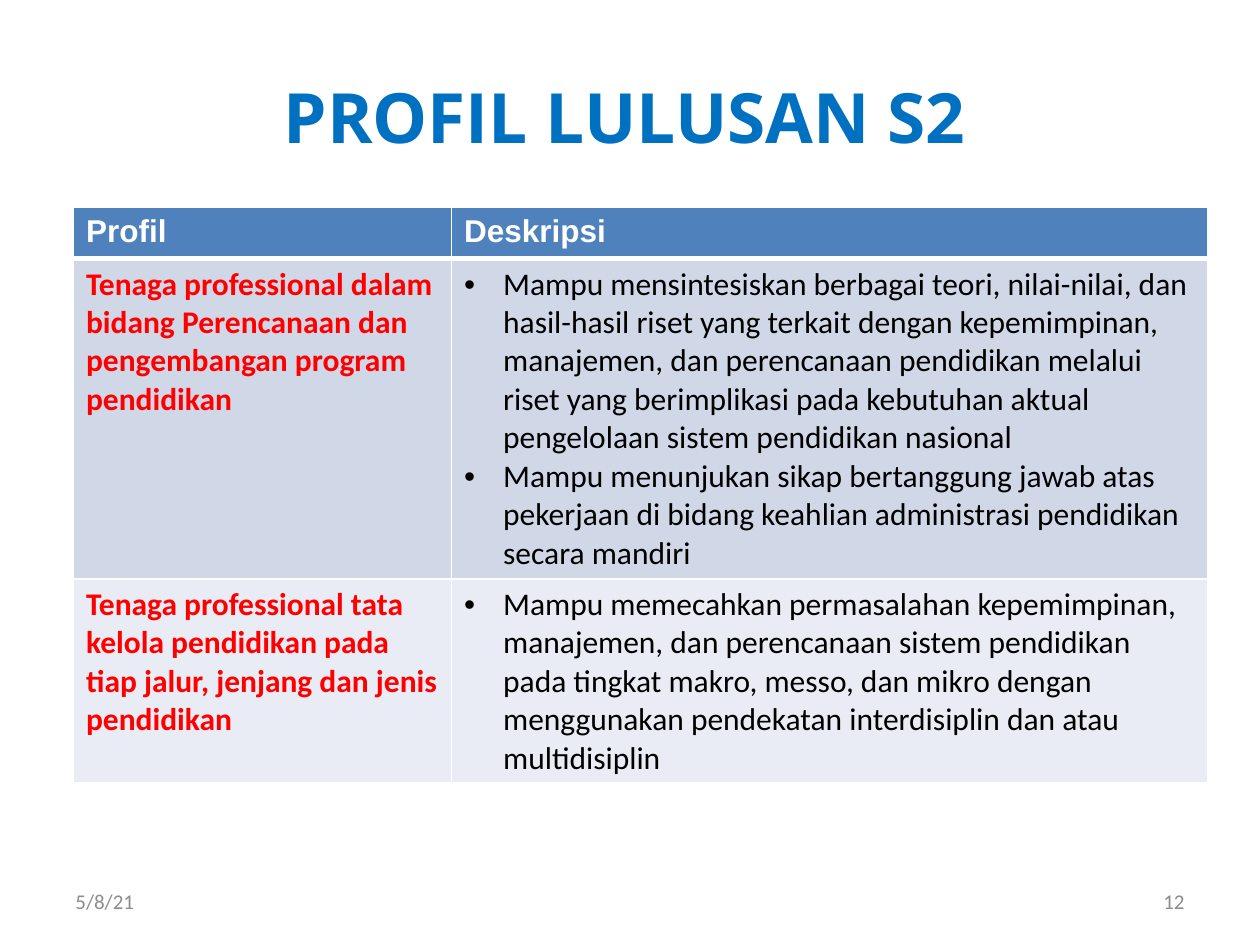
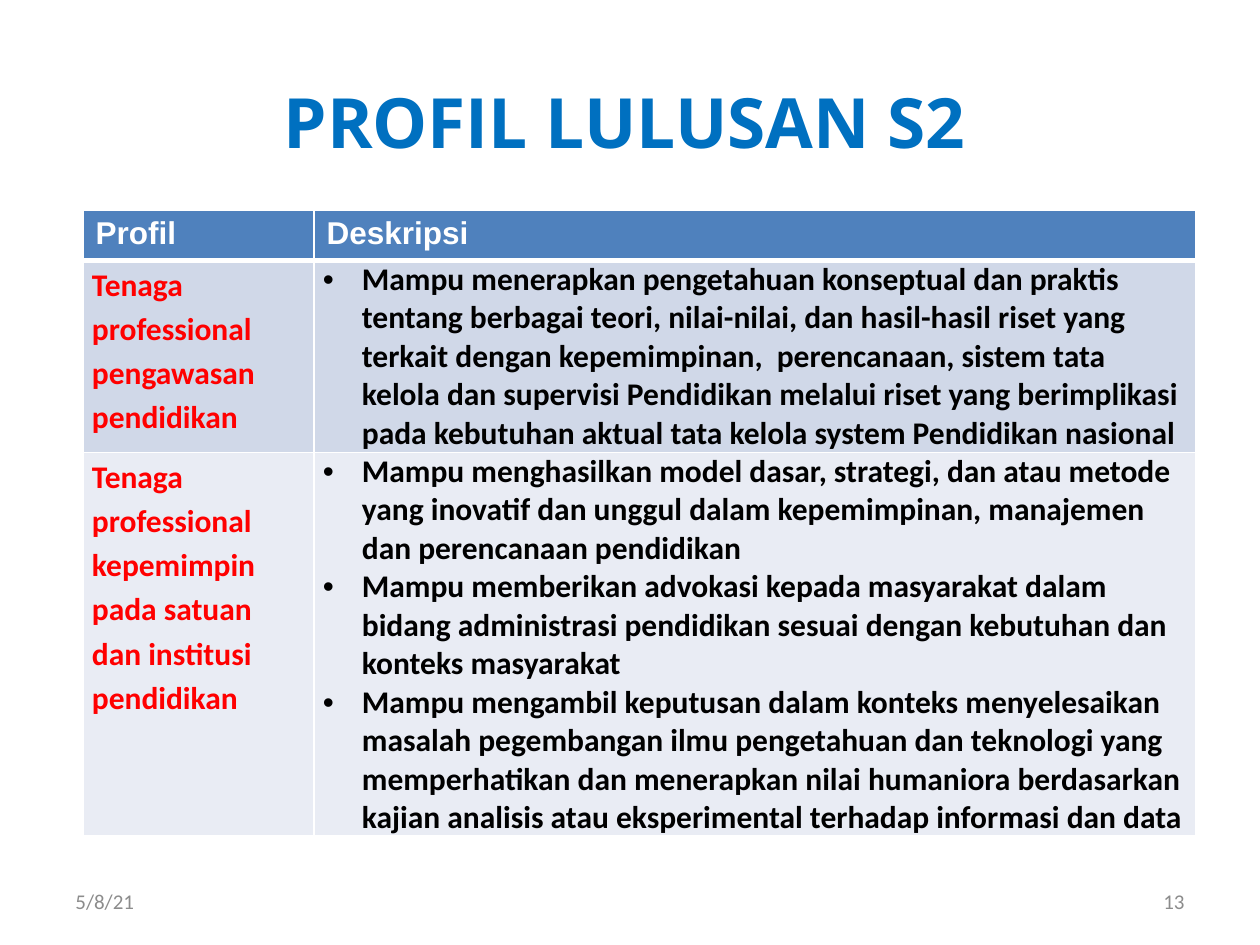
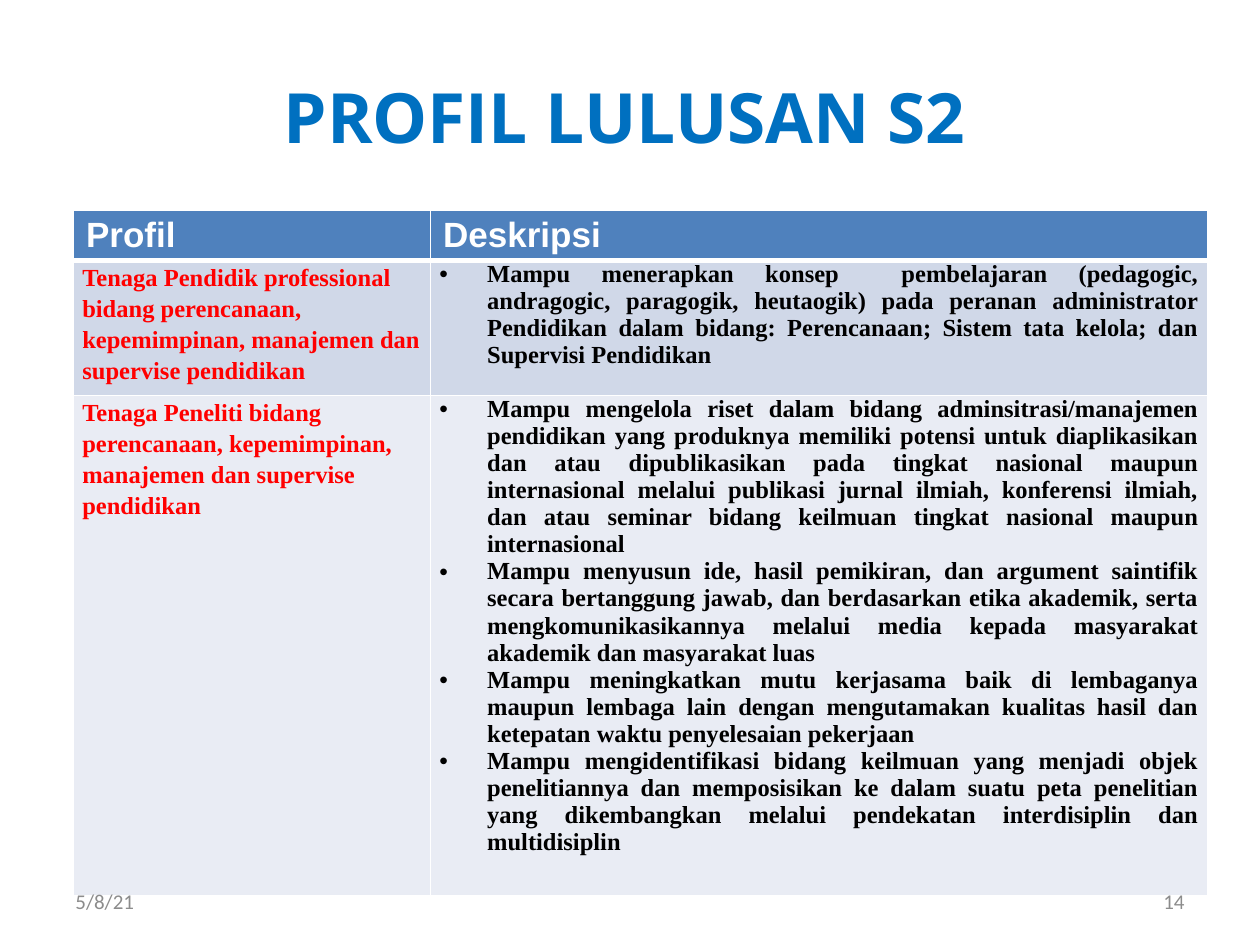
from dataclasses import dataclass
from lxml import etree
from pptx import Presentation
from pptx import util as u
from pptx.dml.color import RGBColor
from pptx.enum import text
from pptx.oxml import ns

WHITE, BLACK, RED, GREY = "FFFFFF", "000000", "FF0000", "8C8C8C"
TITLE, HEAD = "0070C0", "4F81BD"
BANDS = ["D0D8E8", "E9ECF4"]
LEFT, MID, RIGHT, JUST = (text.PP_ALIGN.LEFT, text.PP_ALIGN.CENTER,
                          text.PP_ALIGN.RIGHT, text.PP_ALIGN.JUSTIFY)


def paint(code):
    return RGBColor.from_string(code)


def node(parent, tag, **attrs):
    return etree.SubElement(parent, ns.qn(tag), attrs)


@dataclass
class Look:
    font: str = "Calibri"
    size: float = 18
    bold: bool = True
    head: float = 18
    align: int = LEFT
    indent: float = 0.31
    tight: bool = True


class Deck:
    cols, rows = 120, 90

    def __init__(self):
        self.prs = Presentation()
        self.prs.slide_width = u.Inches(10)
        self.prs.slide_height = u.Inches(7.5)
        self.blank = self.prs.slide_layouts[6]

    def across(self, n):
        return round(self.prs.slide_width * n / self.cols)

    def down(self, n):
        return round(self.prs.slide_height * n / self.rows)

    def page(self):
        self.slide = self.prs.slides.add_slide(self.blank)

    def run(self, para, words, font, size, color, bold=False):
        run = para.add_run()
        run.text = words
        run.font.name = font
        run.font.size = u.Pt(size)
        run.font.bold = bold
        run.font.color.rgb = paint(color)

    def box(self, words, x, y, w, h, font, size, color, align, bold=False):
        shape = self.slide.shapes.add_textbox(
            self.across(x), self.down(y), self.across(w), self.down(h))
        frame = shape.text_frame
        frame.word_wrap = True
        frame.vertical_anchor = text.MSO_ANCHOR.MIDDLE
        para = frame.paragraphs[0]
        para.alignment = align
        self.run(para, words, font, size, color, bold)
        return frame

    def title(self, words, y):
        frame = self.box(words, 6, y, 107, 4.4, "Open Sans", 39.6, TITLE, MID, True)
        frame.vertical_anchor = text.MSO_ANCHOR.BOTTOM
        frame.margin_bottom = u.Inches(0.18)

    def foot(self, date, num):
        for words, x, align in [(date, 6, LEFT), (str(num), 86, RIGHT)]:
            self.box(words, x, 83.4, 28, 4.8, "Calibri", 12, GREY, align)

    def cell(self, cell, fill, base=1):
        props = cell._tc.get_or_add_tcPr()
        for side, width in [("L", 1), ("R", 1), ("T", 1), ("B", base)]:
            line = node(props, f"a:ln{side}", w=str(u.Pt(width)))
            node(node(line, "a:solidFill"), "a:srgbClr", val=WHITE)
        cell.fill.solid()
        cell.fill.fore_color.rgb = paint(fill)
        return cell.text_frame

    def tight(self, cell):
        cell.margin_left = cell.margin_right = u.Inches(0.07)
        cell.margin_top = cell.margin_bottom = 0

    def label(self, frame, words, look):
        para = frame.paragraphs[0]
        if look.tight:
            para.line_spacing = 1.15
        self.run(para, words, look.font, look.size, RED, True)

    def points(self, frame, items, look):
        for i, item in enumerate(items):
            para = frame.add_paragraph() if i else frame.paragraphs[0]
            para.alignment = look.align
            props = para._p.get_or_add_pPr()
            step = u.Inches(look.indent)
            props.set("marL", str(step))
            props.set("indent", str(-step))
            node(props, "a:buFont", typeface="Arial")
            node(props, "a:buChar", char="•")
            self.run(para, item, look.font, look.size, BLACK, look.bold)

    def table(self, x, y, widths, highs, heads, body, look):
        grid = self.slide.shapes.add_table(
            len(highs), len(widths), self.across(x), self.down(y),
            self.across(sum(widths)), self.down(sum(highs))).table
        grid.horz_banding = False
        for col, width in zip(grid.columns, widths):
            col.width = self.across(width)
        for row, high in zip(grid.rows, highs):
            row.height = self.down(high)
        for i, words in enumerate(heads):
            cell = grid.cell(0, i)
            cell.margin_bottom = 0
            frame = self.cell(cell, HEAD, 3)
            self.run(frame.paragraphs[0], words, "Arial", look.head, WHITE, True)
        for i, (name, items) in enumerate(body):
            pair = [grid.cell(i + 1, j) for j in range(2)]
            if look.tight:
                for cell in pair:
                    self.tight(cell)
            left, right = [self.cell(cell, BANDS[i % 2]) for cell in pair]
            self.label(left, name, look)
            self.points(right, items, look)


PAGES = [
    (12.7, 7, 19.75, (36, 72), (4.9, 30.5, 19.4), Look(bold=False, tight=False), [
        ("Tenaga professional dalam bidang Perencanaan dan pengembangan program pendidikan", [
            "Mampu mensintesiskan berbagai teori, nilai-nilai, dan hasil-hasil riset yang terkait "
            "dengan kepemimpinan, manajemen, dan perencanaan pendidikan melalui riset yang "
            "berimplikasi pada kebutuhan aktual pengelolaan sistem pendidikan nasional",
            "Mampu menunjukan sikap bertanggung jawab atas pekerjaan di bidang keahlian "
            "administrasi pendidikan secara mandiri"]),
        ("Tenaga professional tata kelola pendidikan pada tiap jalur, jenjang dan jenis pendidikan", [
            "Mampu memecahkan permasalahan kepemimpinan, manajemen, dan perencanaan sistem "
            "pendidikan pada tingkat makro, messo, dan mikro dengan menggunakan pendekatan "
            "interdisiplin dan atau multidisiplin"])]),
    (13.2, 7.92, 20, (22, 84), (4.8, 18.3, 36.5), Look(), [
        ("Tenaga professional pengawasan pendidikan", [
            "Mampu menerapkan pengetahuan konseptual dan praktis tentang berbagai teori, "
            "nilai-nilai, dan hasil-hasil riset yang terkait dengan kepemimpinan,  perencanaan, "
            "sistem tata kelola dan supervisi Pendidikan melalui riset yang berimplikasi pada "
            "kebutuhan aktual tata kelola system Pendidikan nasional"]),
        ("Tenaga professional kepemimpin pada satuan  dan institusi pendidikan", [
            "Mampu menghasilkan model dasar, strategi, dan atau metode yang inovatif dan unggul "
            "dalam kepemimpinan, manajemen dan perencanaan pendidikan",
            "Mampu memberikan advokasi kepada masyarakat dalam bidang administrasi pendidikan "
            "sesuai dengan kebutuhan dan konteks masyarakat",
            "Mampu mengambil keputusan dalam konteks menyelesaikan masalah pegembangan ilmu "
            "pengetahuan dan teknologi yang memperhatikan dan menerapkan nilai humaniora "
            "berdasarkan kajian analisis atau eksperimental terhadap informasi dan data"])]),
    (12.7, 7, 20, (34, 74), (4.8, 11.9, 43.8),
     Look("Times New Roman", 14, True, 20, JUST, 0.38), [
        ("Tenaga Pendidik professional bidang perencanaan, kepemimpinan, manajemen dan "
         "supervise pendidikan", [
            "Mampu menerapkan konsep  pembelajaran (pedagogic, andragogic, paragogik, heutaogik) "
            "pada peranan administrator Pendidikan dalam bidang: Perencanaan; Sistem tata kelola; "
            "dan Supervisi Pendidikan"]),
        ("Tenaga Peneliti bidang perencanaan, kepemimpinan, manajemen dan supervise pendidikan", [
            "Mampu mengelola riset dalam bidang adminsitrasi/manajemen pendidikan yang produknya "
            "memiliki potensi untuk diaplikasikan dan atau dipublikasikan pada tingkat nasional "
            "maupun internasional melalui publikasi jurnal ilmiah, konferensi ilmiah, dan atau "
            "seminar bidang keilmuan tingkat nasional maupun internasional",
            "Mampu menyusun ide, hasil pemikiran, dan argument saintifik secara bertanggung "
            "jawab, dan berdasarkan etika akademik, serta mengkomunikasikannya melalui media "
            "kepada masyarakat akademik dan masyarakat luas",
            "Mampu meningkatkan mutu kerjasama baik di lembaganya maupun lembaga lain dengan "
            "mengutamakan kualitas hasil dan ketepatan waktu penyelesaian pekerjaan",
            "Mampu mengidentifikasi bidang keilmuan yang menjadi objek penelitiannya dan "
            "memposisikan ke dalam suatu peta penelitian yang dikembangkan melalui pendekatan "
            "interdisiplin dan multidisiplin"])]),
]


def main():
    deck = Deck()
    for num, (top, x, y, widths, highs, look, body) in enumerate(PAGES, 12):
        deck.page()
        deck.title("PROFIL LULUSAN S2", top)
        deck.table(x, y, widths, highs, ["Profil", "Deskripsi"], body, look)
        deck.foot("5/8/21", num)
    deck.prs.save("out.pptx")


if __name__ == "__main__":
    main()
